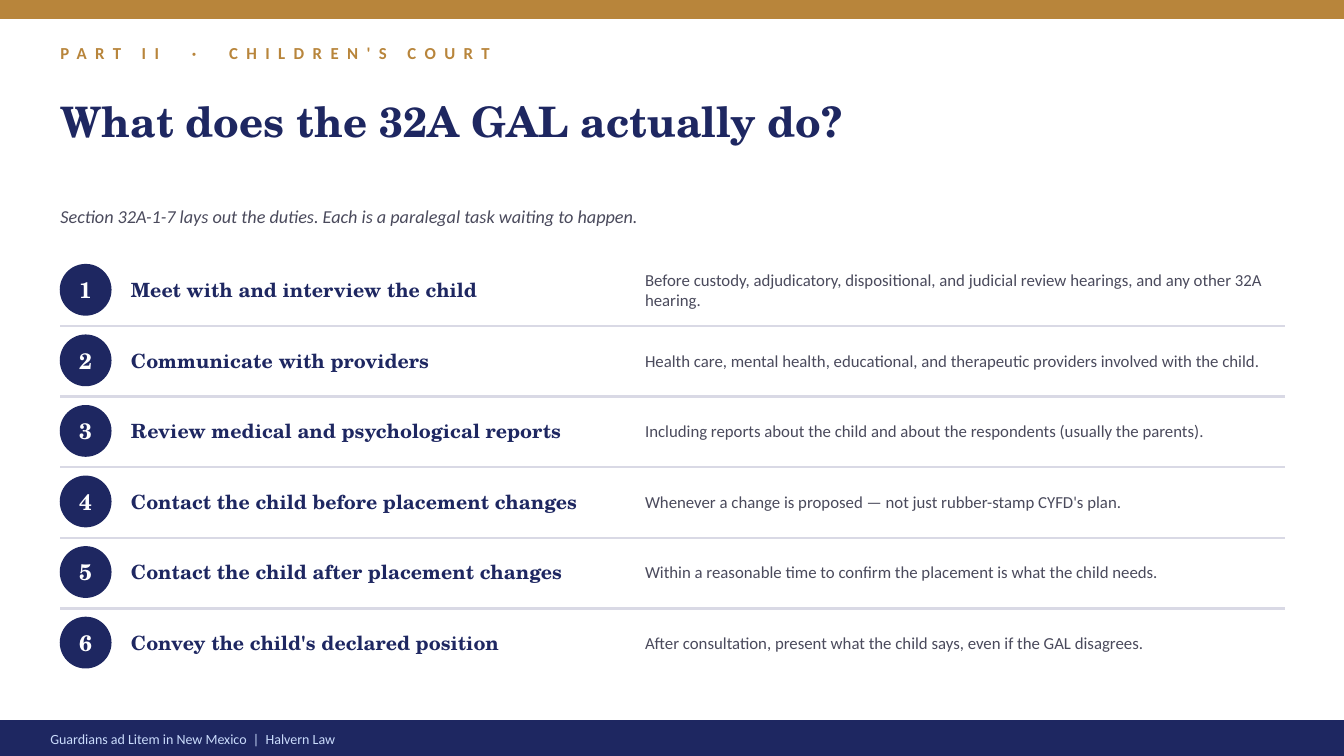
from lxml import etree
from pptx import Presentation
from pptx.dml.color import RGBColor
from pptx.enum import shapes as sh, text as tx
from pptx.oxml import ns
from pptx.util import Pt

NAVY = RGBColor(0x1E, 0x27, 0x61)
GOLD = RGBColor(0xB8, 0x85, 0x3B)
SLATE = RGBColor(0x4A, 0x4A, 0x5C)
RULE = RGBColor(0xD9, 0xD9, 0xE5)
ICE = RGBColor(0xCA, 0xDC, 0xFC)
WHITE = RGBColor(0xFF, 0xFF, 0xFF)
SANS = "Calibri"
SERIF = "TeX Gyre Schola"
WIDE, HIGH = 960, 540
LEFT = 43.2

DUTIES = [
    ("Meet with and interview the child",
     "Before custody, adjudicatory, dispositional, and judicial review hearings, and any other 32A hearing."),
    ("Communicate with providers",
     "Health care, mental health, educational, and therapeutic providers involved with the child."),
    ("Review medical and psychological reports",
     "Including reports about the child and about the respondents (usually the parents)."),
    ("Contact the child before placement changes",
     "Whenever a change is proposed — not just rubber-stamp CYFD's plan."),
    ("Contact the child after placement changes",
     "Within a reasonable time to confirm the placement is what the child needs."),
    ("Convey the child's declared position",
     "After consultation, present what the child says, even if the GAL disagrees."),
]


def write(shape, words, size, color, face=SANS, bold=False, slant=False,
          align=tx.PP_ALIGN.LEFT, track=0):
    """Fill a shape with one formatted paragraph."""
    frame = shape.text_frame
    frame.word_wrap = True
    frame.vertical_anchor = tx.MSO_ANCHOR.MIDDLE
    frame.margin_left = frame.margin_right = 0
    frame.margin_top = frame.margin_bottom = 0
    para = frame.paragraphs[0]
    para.alignment = align
    run = para.add_run()
    run.text = words
    font = run.font
    font.name, font.size, font.bold, font.italic = face, Pt(size), bold, slant
    font.color.rgb = color
    if track:
        run._r.get_or_add_rPr().set("spc", str(track * 100))


def label(slide, box, words, size, color, **style):
    """Add a text box in the given box."""
    area = slide.shapes.add_textbox(*map(Pt, box))
    write(area, words, size, color, **style)


def block(slide, kind, box, color):
    """Add a preset shape in one flat colour."""
    shape = slide.shapes.add_shape(kind, *map(Pt, box))
    shape.shadow.inherit = False
    shape.fill.solid()
    shape.fill.fore_color.rgb = color
    shape.line.color.rgb = color
    shape.line.width = Pt(1)
    return shape


def divide(slide, left, top, width):
    """Draw a level rule."""
    line = slide.shapes.add_connector(
        sh.MSO_CONNECTOR.STRAIGHT, Pt(left), Pt(top), Pt(left + width), Pt(top))
    line.line.color.rgb = RULE
    line.line.width = Pt(1.75)
    etree.SubElement(line._element.spPr, ns.qn("a:effectLst"))


def header(slide, left, top, width):
    """Place the top band, section tag, title and lead line."""
    block(slide, sh.MSO_SHAPE.RECTANGLE, (0, top, WIDE, 13), GOLD)
    label(slide, (left, top + 25.2, width, 25.2), "PART II  ·  CHILDREN'S COURT",
          12, GOLD, bold=True, track=6)
    label(slide, (left, top + 50.4, width, 72), "What does the 32A GAL actually do?",
          30, NAVY, face=SERIF, bold=True)
    label(slide, (left, top + 140.4, width, 28.8),
          "Section 32A-1-7 lays out the duties. Each is a paralegal task waiting to happen.",
          13, SLATE, slant=True)


def duty(slide, left, top, height, number, name, note):
    """Place one numbered duty with its explanation."""
    disc = 36
    badge = block(slide, sh.MSO_SHAPE.OVAL,
                  (left, top + (height - disc) / 2, disc, disc), NAVY)
    write(badge, str(number), 16, WHITE, face=SERIF, bold=True,
          align=tx.PP_ALIGN.CENTER)
    label(slide, (left + 50.4, top, 360, height), name, 14, NAVY,
          face=SERIF, bold=True)
    label(slide, (left + 417.6, top, 460.8, height), note, 12, SLATE)


def roster(slide, left, top, width, pitch):
    """Stack the duties at an even pitch with rules between them."""
    for i, (name, note) in enumerate(DUTIES):
        y = top + i * pitch
        if i:
            divide(slide, left, y - 4.7, width)
        duty(slide, left, y, 39.6, i + 1, name, note)


def footer(slide, top, height):
    """Place the bottom band and its caption."""
    block(slide, sh.MSO_SHAPE.RECTANGLE, (0, top, WIDE, height), NAVY)
    label(slide, (36, top + 2.2, 576, 21.6),
          "Guardians ad Litem in New Mexico  |  Halvern Law", 10, ICE)


def main():
    """Build and save the slide."""
    deck = Presentation()
    deck.slide_width, deck.slide_height = Pt(WIDE), Pt(HIGH)
    slide = deck.slides.add_slide(deck.slide_layouts[6])
    header(slide, LEFT, 0, 864)
    roster(slide, LEFT, 187.2, 874.8, 50.4)
    footer(slide, HIGH - 25.2, 25.2)
    deck.save("out.pptx")


if __name__ == "__main__":
    main()
